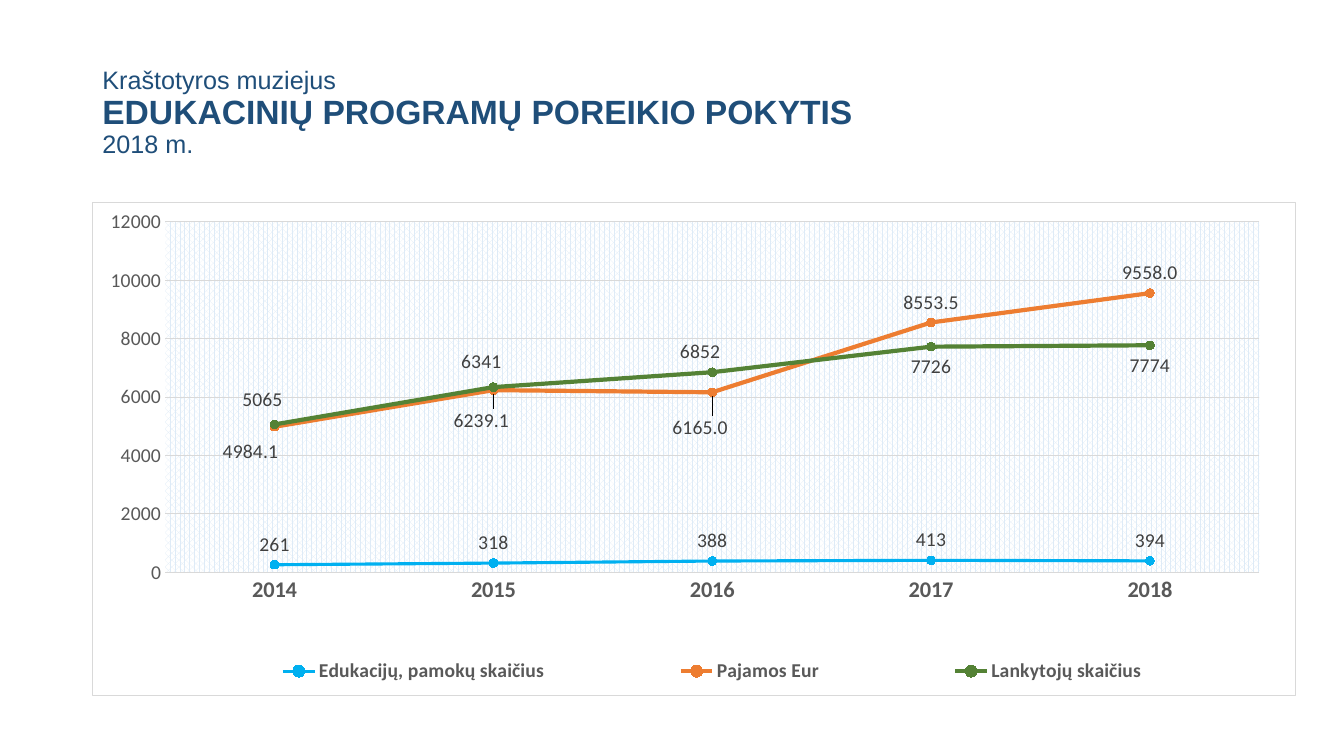
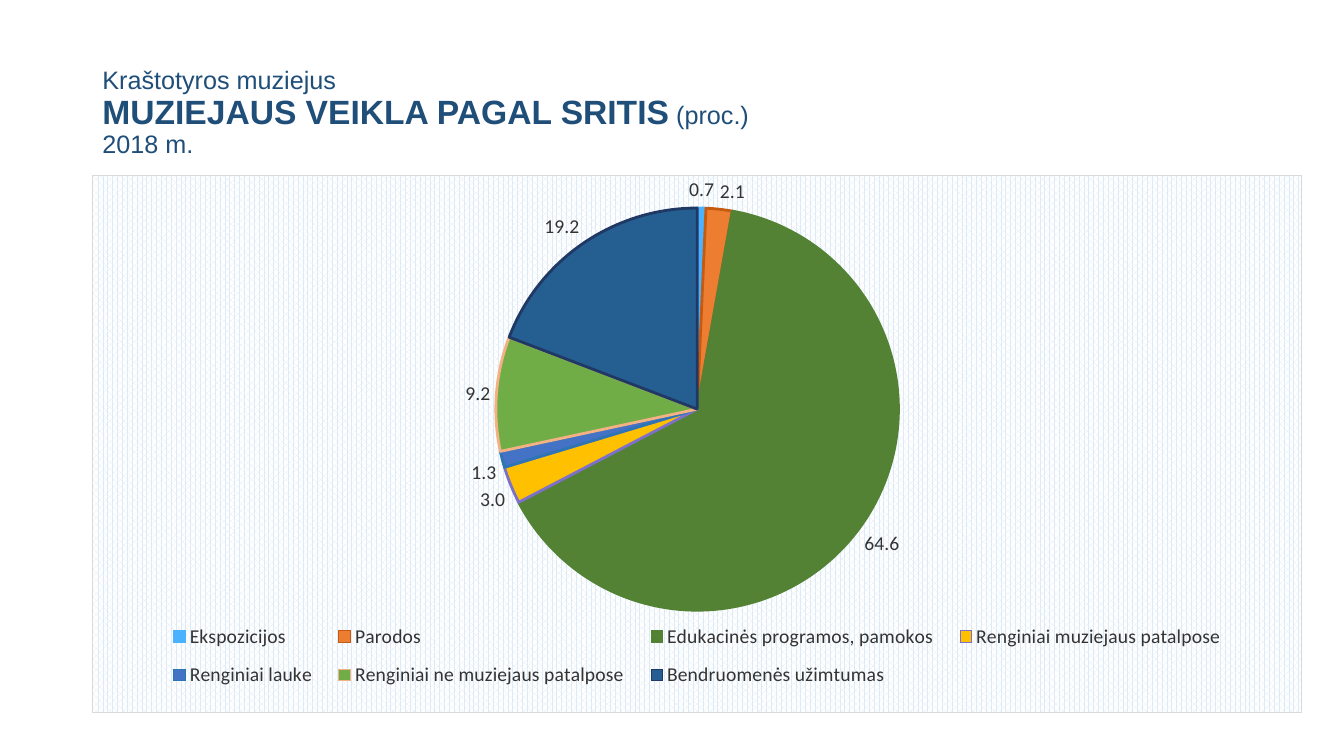
from dataclasses import dataclass, field

import pptx
import pptx.chart.data
import pptx.dml.color
import pptx.enum.chart
import pptx.enum.text
import pptx.oxml
import pptx.oxml.ns
import pptx.util
from pptx.util import Cm

COLORS = {
    "title": "1F4E79",
    "axis": "595959",
    "grid": "D9D9D9",
    "line_label": "404040",
    "pie_label": "333333",
    "hatch": "DEEBF7",
    "paper": "FFFFFF",
    "sky": "00B0F0",
    "orange": "ED7D31",
    "green": "548235",
}
LEFT = Cm(2.33)
NS = pptx.oxml.ns.nsdecls("c", "a")
XL = pptx.enum.chart
ABOVE, BELOW = XL.XL_LABEL_POSITION.ABOVE, XL.XL_LABEL_POSITION.BELOW


@dataclass
class PointLabel:
    """Label placed apart from the rest; dx and dy are shares of the chart."""
    position: XL.XL_LABEL_POSITION
    dx: float
    dy: float


@dataclass
class LineSeries:
    name: str
    values: tuple[float, ...]
    color: str
    width: float
    label_position: XL.XL_LABEL_POSITION
    number_format: str = "0"
    moved: list[PointLabel] = field(default_factory=list)


@dataclass
class Slice:
    name: str
    value: float
    fill: str
    border: str


@dataclass
class Box:
    """Area of a chart, in shares of its width and height."""
    x: float
    y: float
    w: float
    h: float


YEARS = ("2014", "2015", "2016", "2017", "2018")
LINES = [
    LineSeries("Edukacijų, pamokų skaičius", (261, 318, 388, 413, 394),
               COLORS["sky"], 2.25, ABOVE),
    LineSeries("Pajamos Eur", (4984.1, 6239.1, 6165, 8553.5, 9558),
               COLORS["orange"], 3, ABOVE, "0.0",
               [PointLabel(BELOW, -0.02, 0.01), PointLabel(BELOW, -0.01, 0.02),
                PointLabel(BELOW, -0.01, 0.03)]),
    LineSeries("Lankytojų skaičius", (5065, 6341, 6852, 7726, 7774),
               COLORS["green"], 3, BELOW, "0",
               [PointLabel(ABOVE, -0.01, -0.01), PointLabel(ABOVE, -0.01, -0.01),
                PointLabel(ABOVE, -0.01, 0)]),
]
SLICES = [
    Slice("Ekspozicijos", 0.7, "4BB2FF", "4BB2FF"),
    Slice("Parodos", 2.1, COLORS["orange"], "C55A11"),
    Slice("Edukacinės programos, pamokos", 64.6, COLORS["green"], COLORS["green"]),
    Slice("Renginiai muziejaus patalpose", 3, "FFC000", "7C70C8"),
    Slice("Renginiai lauke", 1.3, "4472C4", "2E75B6"),
    Slice("Renginiai ne muziejaus patalpose", 9.2, "70AD47", "F4B183"),
    Slice("Bendruomenės užimtumas", 19.2, "255E91", "1F3864"),
]


def rgb(color: str) -> pptx.dml.color.RGBColor:
    return pptx.dml.color.RGBColor.from_string(color)


def style_font(font, size: float, color: str, bold: bool = False,
               name: str = "Calibri") -> None:
    font.name, font.size, font.bold = name, pptx.util.Pt(size), bold
    font.color.rgb = rgb(color)


def style_line(line, color: str, width: float) -> None:
    line.color.rgb = rgb(color)
    line.width = pptx.util.Pt(width)


def style_fill(fill, color: str) -> None:
    fill.solid()
    fill.fore_color.rgb = rgb(color)


def layout_xml(values: dict[str, object]):
    items = "".join(f'<c:{tag} val="{value}"/>' for tag, value in values.items())
    return pptx.oxml.parse_xml(
        f"<c:layout {NS}><c:manualLayout>{items}</c:manualLayout></c:layout>")


def box_layout(box: Box, inner: bool = False):
    target = {"layoutTarget": "inner"} if inner else {}
    return layout_xml({**target, "xMode": "edge", "yMode": "edge",
                       "x": box.x, "y": box.y, "w": box.w, "h": box.h})


def area_xml(hatched: bool, bordered: bool):
    """Shape properties of a chart area: hatching and thin grey border."""
    fill = (f'<a:pattFill prst="pct70"><a:fgClr><a:srgbClr val="{COLORS["hatch"]}"/>'
            f'</a:fgClr><a:bgClr><a:srgbClr val="{COLORS["paper"]}"/></a:bgClr>'
            "</a:pattFill>" if hatched else "<a:noFill/>")
    line = (f'<a:ln w="9525"><a:solidFill><a:srgbClr val="{COLORS["grid"]}"/>'
            "</a:solidFill></a:ln>" if bordered else "<a:ln><a:noFill/></a:ln>")
    return pptx.oxml.parse_xml(f"<c:spPr {NS}>{fill}{line}</c:spPr>")


def add_title(s, heading: str, unit: str = "") -> None:
    sp = s.shapes.add_textbox(LEFT, Cm(1.02), Cm(29.21), Cm(3.68))
    tf = sp.text_frame
    tf.word_wrap = True
    tf.vertical_anchor = pptx.enum.text.MSO_ANCHOR.MIDDLE
    tf.text = f"Kraštotyros muziejus\n{heading}\n2018 m."
    if unit:
        tf.paragraphs[1].add_run().text = f" {unit}"
    for p in tf.paragraphs:
        p.line_spacing = 0.9
        for r in p.runs:
            main = r.text == heading
            style_font(r.font, 24 if main else 18, COLORS["title"], main, "Arial")


def add_chart(s, kind, data, top, width, height, plot_box: Box, legend_box: Box,
              hatch_all: bool):
    """Add a framed chart; hatch all of it or only the plot area."""
    chart = s.shapes.add_chart(kind, LEFT, top, width, height, data).chart
    chart.has_title = False
    chart.font.name, chart.font.size = "Calibri", pptx.util.Pt(10)
    chart.has_legend = True
    chart.legend.position = XL.XL_LEGEND_POSITION.BOTTOM
    chart.legend.include_in_layout = False
    root = chart.element
    for old in root.xpath("c:chart/c:plotArea/c:layout | c:chart/c:legend/c:layout"):
        old.getparent().remove(old)
    plot_area = root.xpath("c:chart/c:plotArea")[0]
    plot_area.insert(0, box_layout(plot_box, inner=True))
    plot_area.append(area_xml(not hatch_all, False))
    root.xpath("c:chart/c:legend/c:legendPos")[0].addnext(box_layout(legend_box))
    root.xpath("c:chart")[0].addnext(area_xml(hatch_all, True))
    return chart


def style_labels(labels, position, color: str) -> None:
    labels.show_value = True
    labels.position = position
    style_font(labels.font, 14, color)


def style_axes(chart) -> None:
    years, amounts = chart.category_axis, chart.value_axis
    for axis, size, bold in ((years, 16, True), (amounts, 14, False)):
        axis.major_tick_mark = axis.minor_tick_mark = XL.XL_TICK_MARK.NONE
        style_font(axis.tick_labels.font, size, COLORS["axis"], bold)
    style_line(years.format.line, COLORS["grid"], 0.75)
    amounts.format.line.fill.background()
    amounts.minimum_scale, amounts.maximum_scale = 0, 12000
    amounts.major_unit = 2000
    amounts.tick_labels.number_format = "0"
    amounts.tick_labels.number_format_is_linked = False
    style_line(amounts.major_gridlines.format.line, COLORS["grid"], 0.75)


def add_demand_chart(s) -> None:
    data = pptx.chart.data.CategoryChartData()
    data.categories = YEARS
    for item in LINES:
        data.add_series(item.name, item.values, item.number_format)
    chart = add_chart(s, XL.XL_CHART_TYPE.LINE_MARKERS, data,
                      Cm(5.08), Cm(30.33), Cm(12.47),
                      Box(0.06, 0.04, 0.91, 0.71), Box(0.05, 0.9, 0.93, 0.1), False)
    style_font(chart.legend.font, 14, COLORS["axis"], True)
    style_axes(chart)
    plot = chart.plots[0]
    plot.vary_by_categories = False
    for item, series, ser in zip(LINES, plot.series, chart.element.xpath(".//c:ser")):
        series.smooth = False
        style_line(series.format.line, item.color, item.width)
        series.marker.style = XL.XL_MARKER_STYLE.CIRCLE
        series.marker.size = 6
        style_fill(series.marker.format.fill, item.color)
        style_line(series.marker.format.line, item.color, 0.75)
        style_labels(series.data_labels, item.label_position, COLORS["line_label"])
        for i, moved in enumerate(item.moved):
            label = series.points[i].data_label
            style_font(label.font, 14, COLORS["line_label"])
            label.position = moved.position
            idx = ser.xpath(f'c:dLbls/c:dLbl/c:idx[@val="{i}"]')[0]
            idx.addnext(layout_xml({"x": moved.dx, "y": moved.dy}))


def add_activity_chart(s) -> None:
    data = pptx.chart.data.CategoryChartData()
    data.categories = [item.name for item in SLICES]
    data.add_series("Series 1", [item.value for item in SLICES], "0.0")
    chart = add_chart(s, XL.XL_CHART_TYPE.PIE, data,
                      Cm(4.42), Cm(30.48), Cm(13.54),
                      Box(0, 0.06, 1, 0.75), Box(0.05, 0.81, 0.9, 0.17), True)
    style_font(chart.legend.font, 14, COLORS["pie_label"])
    plot = chart.plots[0]
    plot.vary_by_categories = True
    series = plot.series[0]
    style_labels(series.data_labels, XL.XL_LABEL_POSITION.OUTSIDE_END,
                 COLORS["pie_label"])
    for i, item in enumerate(SLICES):
        point = series.points[i]
        style_fill(point.format.fill, item.fill)
        style_line(point.format.line, item.border, 2)


def main() -> None:
    prs = pptx.Presentation()
    prs.slide_width, prs.slide_height = Cm(33.87), Cm(19.05)
    blank = prs.slide_layouts[6]

    s = prs.slides.add_slide(blank)
    add_title(s, "EDUKACINIŲ PROGRAMŲ POREIKIO POKYTIS")
    add_demand_chart(s)

    s = prs.slides.add_slide(blank)
    add_title(s, "MUZIEJAUS VEIKLA PAGAL SRITIS", "(proc.)")
    add_activity_chart(s)

    prs.save("out.pptx")


if __name__ == "__main__":
    main()
